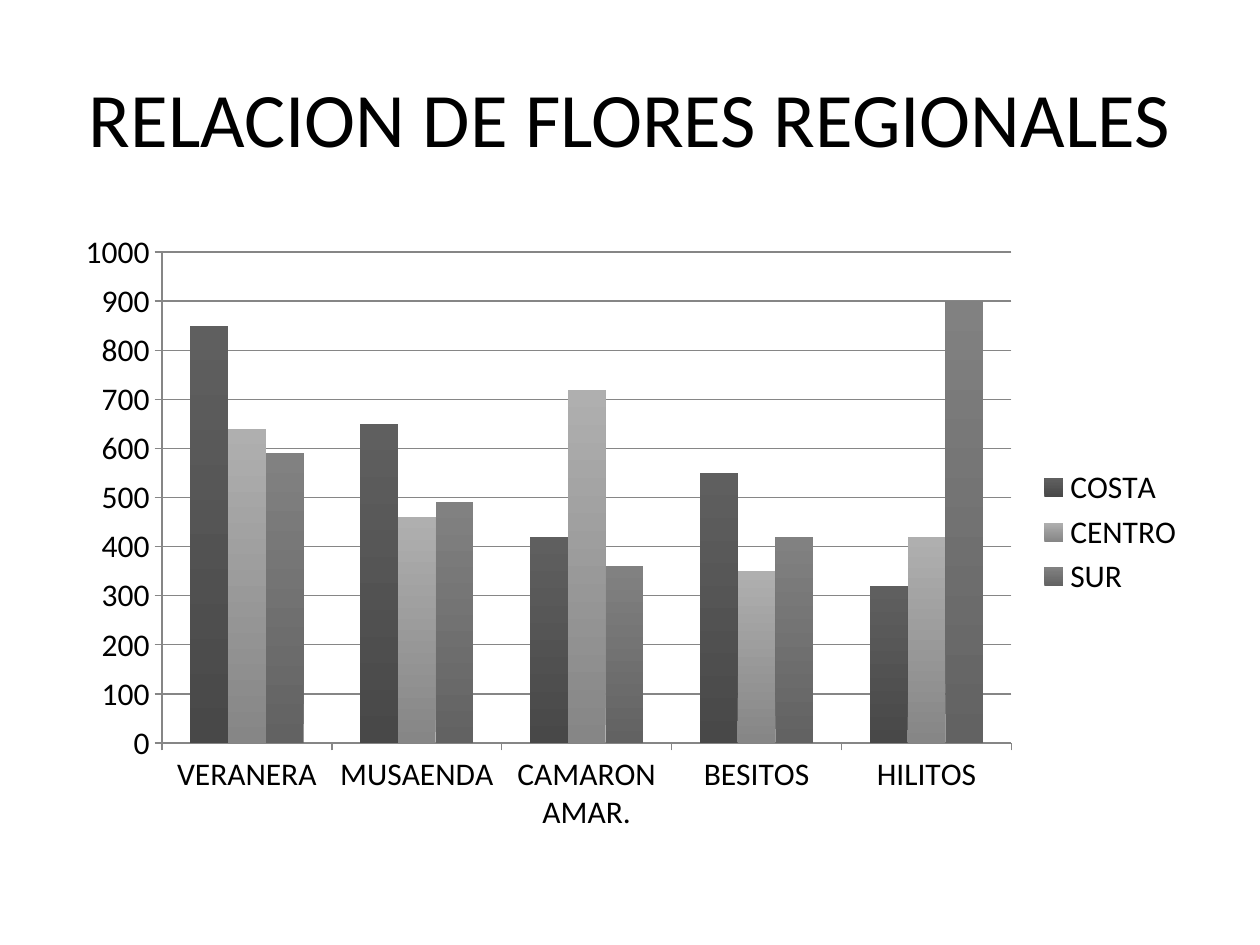
"""Build a slide comparing regional flowers in a clustered column chart."""
from pptx import Presentation
from pptx.chart.data import CategoryChartData
from pptx.dml.color import RGBColor
from pptx.enum.chart import XL_CHART_TYPE as ChartType
from pptx.enum.chart import XL_LEGEND_POSITION as LegendPosition
from pptx.enum.chart import XL_TICK_MARK as TickMark
from pptx.enum.text import MSO_ANCHOR as Anchor
from pptx.enum.text import PP_ALIGN as Align
from pptx.util import Inches, Pt

FONT = "Calibri"
COLORS = {
    "text": "000000",
    "axis": "868686",
    "COSTA": ("484848", "5F5F5F"),
    "CENTRO": ("868686", "AFAFAF"),
    "SUR": ("626262", "818181"),
}
FLOWERS = ["VERANERA", "MUSAENDA", "CAMARON AMAR.", "BESITOS", "HILITOS"]
REGIONS = {
    "COSTA": [850, 650, 420, 550, 320],
    "CENTRO": [640, 460, 720, 350, 420],
    "SUR": [590, 490, 360, 420, 900],
}


def add_text(slide, text, left, top, width, height, size, color, align):
    box = slide.shapes.add_textbox(Inches(left), Inches(top), Inches(width), Inches(height))
    frame = box.text_frame
    frame.word_wrap = True
    frame.vertical_anchor = Anchor.MIDDLE
    paragraph = frame.paragraphs[0]
    paragraph.alignment = align
    run = paragraph.add_run()
    run.text = text
    run.font.name = FONT
    run.font.size = Pt(size)
    run.font.color.rgb = RGBColor.from_string(color)


deck = Presentation()
deck.slide_width, deck.slide_height = Inches(10), Inches(7.5)
slide = deck.slides.add_slide(deck.slide_layouts[6])

add_text(slide, "RELACION DE FLORES REGIONALES", left=0.5, top=0.3, width=9, height=1.25,
         size=44, color=COLORS["text"], align=Align.CENTER)

flower_data = CategoryChartData()
flower_data.categories = FLOWERS
for region, counts in REGIONS.items():
    flower_data.add_series(region, counts)

flower_chart = slide.shapes.add_chart(
    ChartType.COLUMN_CLUSTERED, Inches(0.5), Inches(1.75), Inches(9), Inches(4.95), flower_data
).chart
flower_chart.has_title = False
flower_chart.font.name = FONT
flower_chart.font.size = Pt(18)
flower_chart.font.color.rgb = RGBColor.from_string(COLORS["text"])
flower_chart.has_legend = True
flower_chart.legend.position = LegendPosition.RIGHT
flower_chart.legend.include_in_layout = False

columns = flower_chart.plots[0]
columns.gap_width = 150
columns.overlap = 0
columns.vary_by_categories = False
for region in columns.series:
    fill = region.format.fill
    fill.gradient()
    fill.gradient_angle = 90
    for stop, shade in zip(fill.gradient_stops, COLORS[region.name]):
        stop.color.rgb = RGBColor.from_string(shade)

counts_axis, flowers_axis = flower_chart.value_axis, flower_chart.category_axis
counts_axis.minimum_scale = 0
counts_axis.maximum_scale = 1000
counts_axis.major_unit = 100
counts_axis.has_major_gridlines = True
for axis in (counts_axis, flowers_axis):
    axis.major_tick_mark = TickMark.OUTSIDE
    axis.minor_tick_mark = TickMark.NONE
for rule in (counts_axis, flowers_axis, counts_axis.major_gridlines):
    rule.format.line.width = Pt(0.75)
    rule.format.line.color.rgb = RGBColor.from_string(COLORS["axis"])

deck.save("out.pptx")
